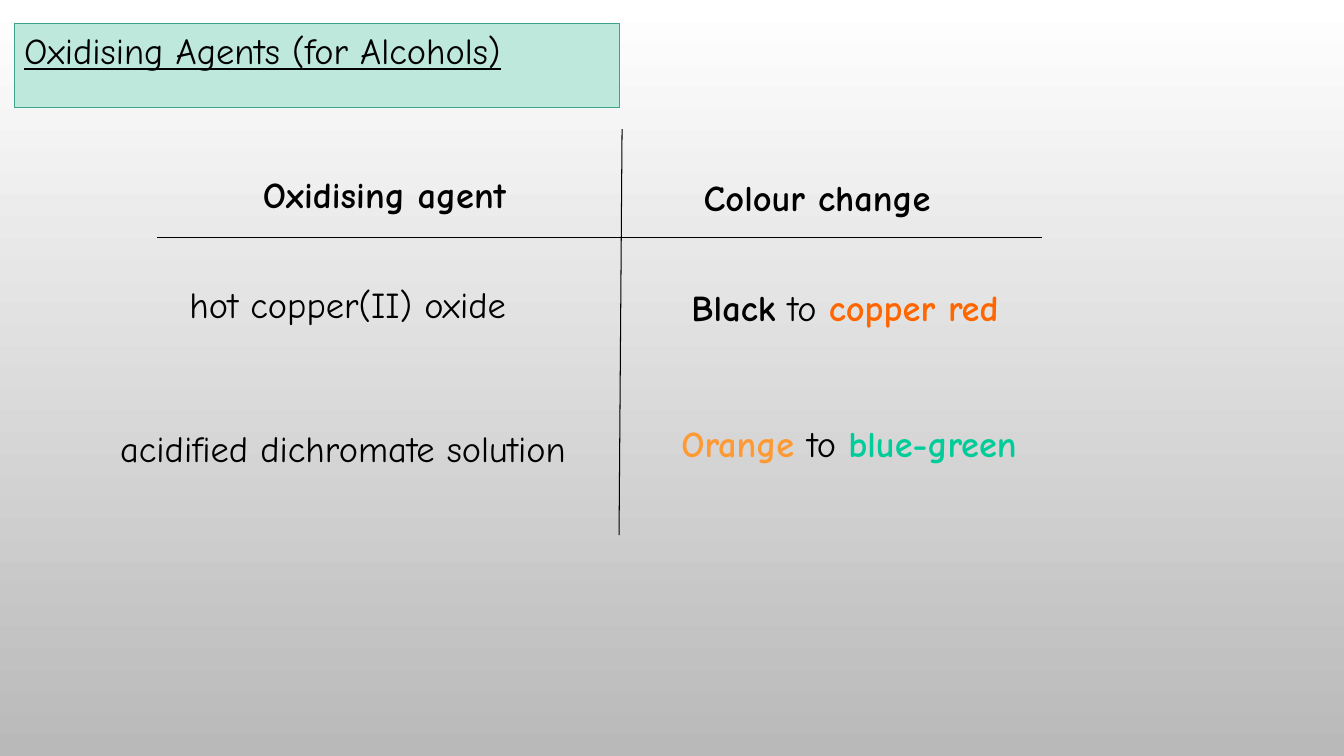
from dataclasses import dataclass

from lxml.etree import SubElement
from pptx import Presentation
from pptx.dml.color import RGBColor
from pptx.enum.shapes import MSO_CONNECTOR
from pptx.enum.text import MSO_ANCHOR, MSO_AUTO_SIZE, PP_ALIGN
from pptx.oxml.ns import qn
from pptx.slide import Slide
from pptx.text.text import TextFrame
from pptx.util import Inches, Pt

BLACK = RGBColor(0x00, 0x00, 0x00)
WHITE = RGBColor(0xFF, 0xFF, 0xFF)
GREY = RGBColor(0xB9, 0xB9, 0xB9)
MINT = RGBColor(0xBD, 0xE8, 0xDB)
TEAL = RGBColor(0x3C, 0xA2, 0x8B)
COPPER_RED = RGBColor(0xFF, 0x66, 0x00)
ORANGE = RGBColor(0xFF, 0x99, 0x33)
BLUE_GREEN = RGBColor(0x00, 0xCC, 0x99)

FONT = {"name": "Comic Neue", "size": Pt(26)}
FRAME = {"word_wrap": True, "auto_size": MSO_AUTO_SIZE.SHAPE_TO_FIT_TEXT,
         "vertical_anchor": MSO_ANCHOR.TOP}
LINE_WIDTH = Pt(0.75)
TEXT_HEIGHT = 0.54


@dataclass(frozen=True)
class Words:
    text: str
    bold: bool = False
    color: RGBColor = BLACK
    underline: bool = False


@dataclass(frozen=True)
class Entry:
    left: float
    top: float
    width: float
    words: tuple[Words, ...]
    align: PP_ALIGN = PP_ALIGN.LEFT


@dataclass(frozen=True)
class Rule:
    x1: float
    y1: float
    x2: float
    y2: float


TITLE = Entry(0.14, 0.23, 6, (Words("Oxidising Agents (for Alcohols)", underline=True),))
ENTRIES = (
    Entry(2.51, 1.66, 3.15, (Words("Oxidising agent", True),)),
    Entry(6.88, 1.69, 2.94, (Words("Colour change", True),)),
    Entry(1.17, 2.75, 4.68, (Words("hot copper(II) oxide "),), PP_ALIGN.CENTER),
    Entry(6.76, 2.78, 4.16, (Words("Black", True), Words(" to "),
                             Words("copper red", True, COPPER_RED))),
    Entry(0.67, 4.18, 5.47, (Words("acidified dichromate solution"),), PP_ALIGN.CENTER),
    Entry(6.66, 4.13, 4.36, (Words("Orange ", True, ORANGE), Words("to "),
                             Words("blue-green", True, BLUE_GREEN))),
)
RULES = (Rule(6.17, 1.28, 6.14, 5.31), Rule(1.56, 2.36, 10.33, 2.36))


def set_attributes(target: object, values: dict) -> None:
    for name, value in values.items():
        setattr(target, name, value)


def box(entry: Entry) -> dict:
    return {"left": Inches(entry.left), "top": Inches(entry.top),
            "width": Inches(entry.width), "height": Inches(TEXT_HEIGHT)}


def write(tf: TextFrame, entry: Entry) -> None:
    set_attributes(tf, FRAME)
    p = tf.paragraphs[0]
    p.alignment = entry.align
    for words in entry.words:
        r = p.add_run()
        r.text = words.text
        set_attributes(r.font, FONT | {"bold": words.bold, "underline": words.underline})
        r.font.color.rgb = words.color


def paint_background(s: Slide) -> None:
    fill = s.background.fill
    fill.gradient()
    fill.gradient_angle = 270
    for stop, position, color in zip(fill.gradient_stops, (0, 1), (WHITE, GREY)):
        stop.position = position
        stop.color.rgb = color


def add_title(s: Slide, entry: Entry) -> None:
    sp = s.shapes.title
    set_attributes(sp, box(entry))
    sp.fill.solid()
    sp.fill.fore_color.rgb = MINT
    sp.line.color.rgb = TEAL
    sp.line.width = LINE_WIDTH
    write(sp.text_frame, entry)


def add_entry(s: Slide, entry: Entry) -> None:
    write(s.shapes.add_textbox(**box(entry)).text_frame, entry)


def add_rule(s: Slide, rule: Rule) -> None:
    ends = (Inches(v) for v in (rule.x1, rule.y1, rule.x2, rule.y2))
    line = s.shapes.add_connector(MSO_CONNECTOR.STRAIGHT, *ends)
    line.line.color.rgb = BLACK
    line.line.width = LINE_WIDTH
    SubElement(line._element.spPr, qn("a:effectLst"))


def main() -> None:
    prs = Presentation()
    prs.slide_width, prs.slide_height = Inches(13.33), Inches(7.5)
    s = prs.slides.add_slide(prs.slide_layouts.get_by_name("Title Only"))
    paint_background(s)
    add_title(s, TITLE)
    for rule in RULES:
        add_rule(s, rule)
    for entry in ENTRIES:
        add_entry(s, entry)
    prs.save("out.pptx")


if __name__ == "__main__":
    main()
